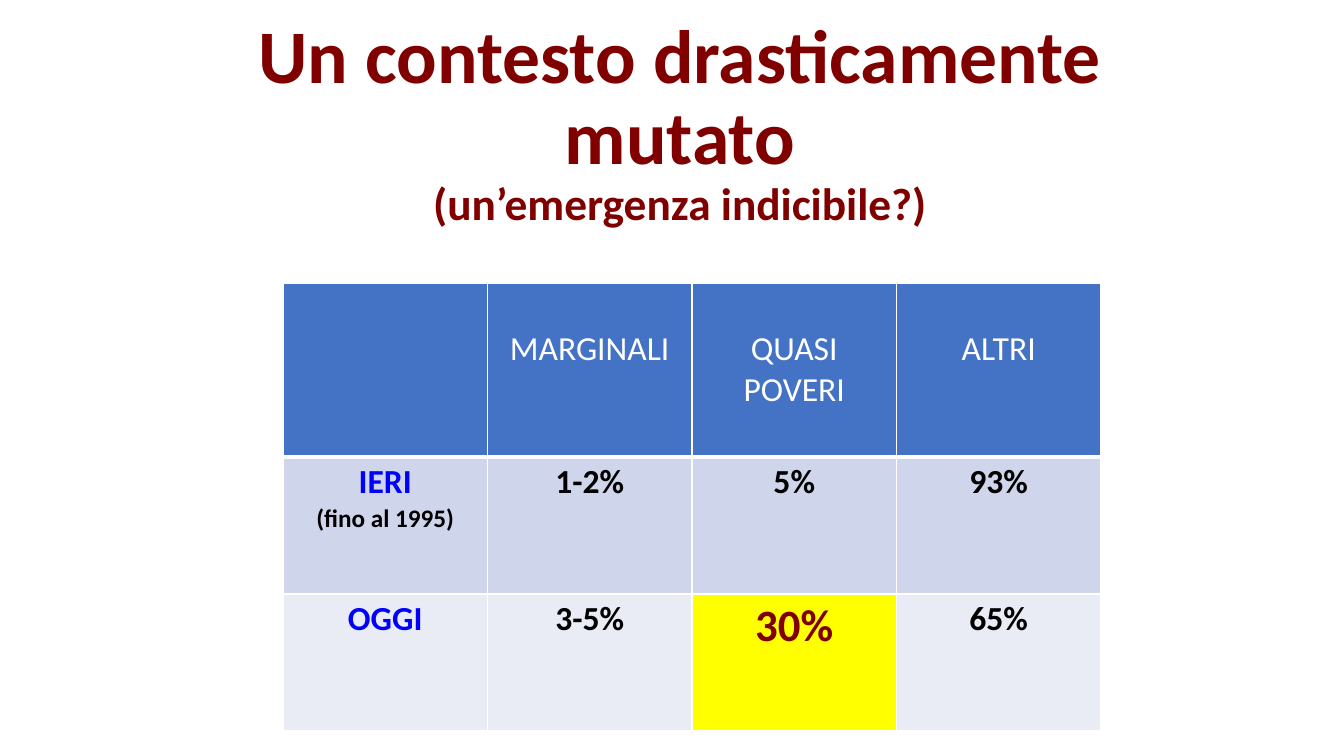
import pptx
import pptx.util
import pptx.dml.color
import pptx.enum.text
import pptx.oxml
import pptx.oxml.ns

RGB = pptx.dml.color.RGBColor
MAROON = RGB(0x80, 0x00, 0x00)
BLUE = RGB(0x00, 0x00, 0xFF)
BLACK = RGB(0x00, 0x00, 0x00)
WHITE = RGB(0xFF, 0xFF, 0xFF)
HEADER = RGB(0x44, 0x72, 0xC4)
BAND_DARK = RGB(0xCF, 0xD5, 0xEA)
BAND_LIGHT = RGB(0xE9, 0xEB, 0xF5)
YELLOW = RGB(0xFF, 0xFF, 0x00)
FONT = "Calibri"

# Content: each run is (text, size, colour, bold)
TITLE = [
    ("Un contesto drasticamente mutato", 54, MAROON, True),
    ("(un’emergenza indicibile?)", 32.4, MAROON, True),
]
HEADINGS = ["", "MARGINALI", "QUASI POVERI", "ALTRI"]
ROWS = [
    [[("IERI", 24, BLUE, True), ("(fino al 1995)", 18, BLACK, True)],
     "1-2%", "5%", "93%"],
    [[("OGGI", 24, BLUE, True)],
     "3-5%", [("30%", 32, MAROON, True)], "65%"],
]
HIGHLIGHT = (2, 2)

# Layout in px
SLIDE = (1344, 756)
TITLE_BOX = (213, 20, 934, 215)
TABLE_BOX = (283, 283, 818, 448)
ROW_HEIGHTS = [174, 137, 137]
HEADER_INSET = 46


def px(n):
    return pptx.util.Emu(round(n * 914400 / 100.8))


def add_run(p, text, size, color, bold):
    r = p.add_run()
    r.text = text
    r.font.name = FONT
    r.font.size = pptx.util.Pt(size)
    r.font.color.rgb = color
    r.font.bold = bold


def add_borders(cell, bottom):
    tc_pr = cell._tc.get_or_add_tcPr()
    for i, side in enumerate("LRTB"):
        width = pptx.util.Pt(bottom if side == "B" else 1)
        tc_pr.insert(i, pptx.oxml.parse_xml(
            f'<a:ln{side} {pptx.oxml.ns.nsdecls("a")} w="{width}">'
            f'<a:solidFill><a:srgbClr val="{WHITE}"/></a:solidFill></a:ln{side}>'))


def fill_cell(cell, runs, fill, bottom):
    cell.fill.solid()
    cell.fill.fore_color.rgb = fill
    add_borders(cell, bottom)
    tf = cell.text_frame
    for i, run in enumerate(runs):
        p = tf.add_paragraph() if i else tf.paragraphs[0]
        p.alignment = pptx.enum.text.PP_ALIGN.CENTER
        add_run(p, *run)


prs = pptx.Presentation()
prs.slide_width, prs.slide_height = map(px, SLIDE)
s = prs.slides.add_slide(prs.slide_layouts[6])

# Title
tf = s.shapes.add_textbox(*map(px, TITLE_BOX)).text_frame
tf.word_wrap = True
tf.vertical_anchor = pptx.enum.text.MSO_ANCHOR.BOTTOM
p = tf.paragraphs[0]
p.alignment = pptx.enum.text.PP_ALIGN.CENTER
p.line_spacing = 0.9
add_run(p, *TITLE[0])
p.add_line_break()
add_run(p, *TITLE[1])

# Table
table = s.shapes.add_table(len(ROWS) + 1, len(HEADINGS), *map(px, TABLE_BOX)).table
for col in table.columns:
    col.width = px(TABLE_BOX[2] / len(HEADINGS))
for row, height in zip(table.rows, ROW_HEIGHTS):
    row.height = px(height)

# Header row
for c, heading in enumerate(HEADINGS):
    cell = table.cell(0, c)
    cell.margin_top = px(HEADER_INSET)
    fill_cell(cell, [(heading, 24, WHITE, False)] if heading else [], HEADER, 3)

# Body rows
for r, (values, band) in enumerate(zip(ROWS, (BAND_DARK, BAND_LIGHT)), 1):
    for c, value in enumerate(values):
        runs = [(value, 24, BLACK, True)] if isinstance(value, str) else value
        fill_cell(table.cell(r, c), runs, YELLOW if (r, c) == HIGHLIGHT else band, 1)

prs.save("out.pptx")
